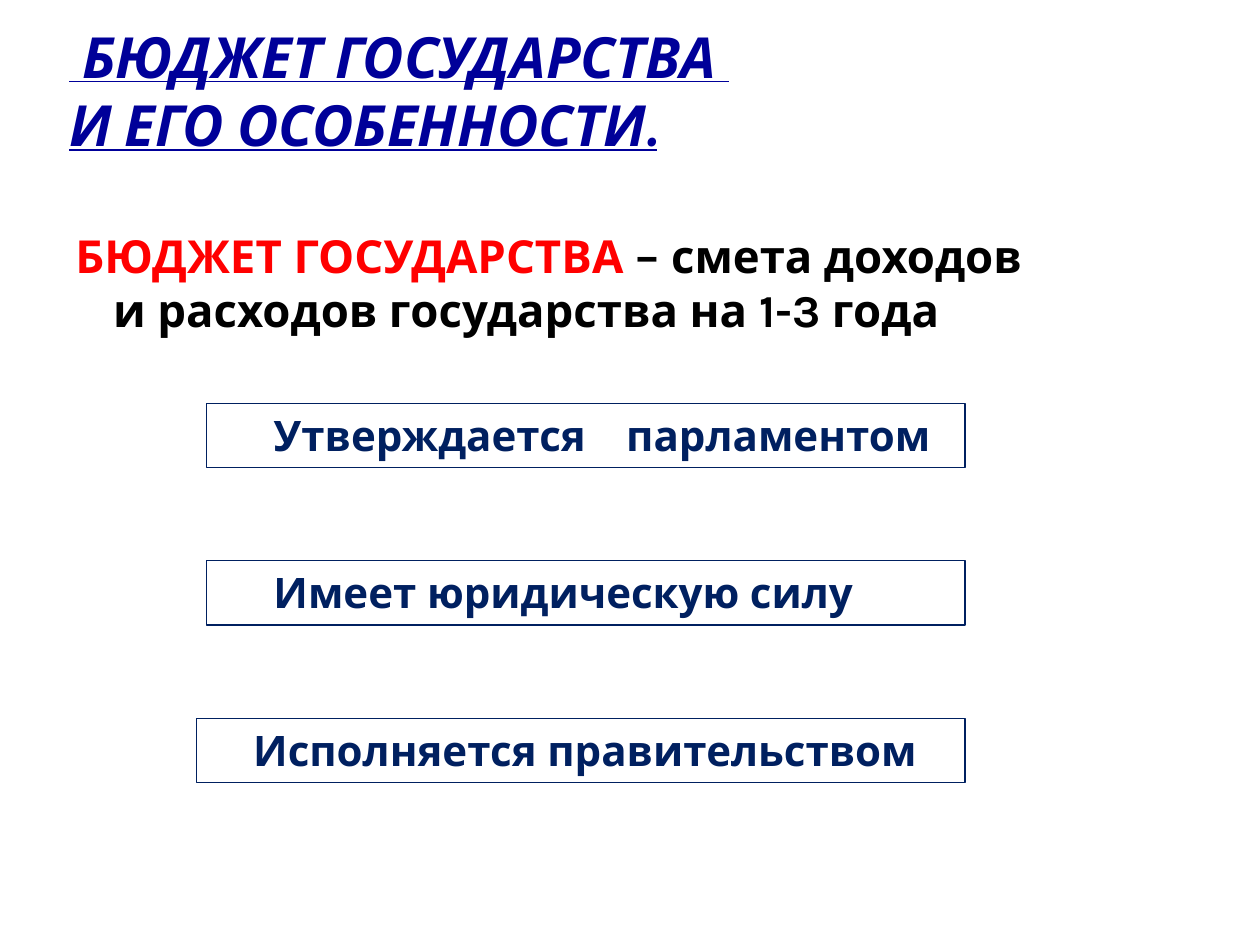
from pptx import Presentation
from pptx.dml.color import RGBColor
from pptx.enum import shapes, text
from pptx.util import Inches, Pt
from lxml import etree

TITLE_BLUE = RGBColor(0x00, 0x00, 0x99)
RED = RGBColor(0xFF, 0x00, 0x00)
BLACK = RGBColor(0x00, 0x00, 0x00)
NAVY = RGBColor(0x00, 0x20, 0x60)
A = "{http://schemas.openxmlformats.org/drawingml/2006/main}"


def style(run, size, color):
    run.font.name = "Karla"
    run.font.size = Pt(size)
    run.font.bold = True
    run.font.color.rgb = color


prs = Presentation()
prs.slide_width, prs.slide_height = Inches(10), Inches(7.5)
slide = prs.slides.add_slide(prs.slide_layouts[6])

# Title, set above the lower part of its box
title = slide.shapes.add_textbox(Inches(0.5), Inches(0.62), Inches(7.92), Inches(1.17)).text_frame
title.word_wrap = True
title.vertical_anchor = text.MSO_ANCHOR.BOTTOM
title.margin_left = title.margin_right = Inches(0.05)
title.margin_top, title.margin_bottom = 0, Inches(0.54)
title.text = " БЮДЖЕТ ГОСУДАРСТВА \vИ ЕГО ОСОБЕННОСТИ."
for run in title.paragraphs[0].runs:
    style(run, 32.4, TITLE_BLUE)
    run.font.italic = run.font.underline = True

# Definition with a hanging indent
body = slide.shapes.add_textbox(Inches(0.5), Inches(1.76), Inches(7.92), Inches(5.3)).text_frame
body.word_wrap = True
definition = body.paragraphs[0]
properties = definition._p.get_or_add_pPr()
properties.set("marL", str(Inches(0.3)))
properties.set("indent", str(-Inches(0.3)))
for words, color in [("БЮДЖЕТ ГОСУДАРСТВА ", RED),
                     ("– смета доходов и расходов государства на 1-3 года", BLACK)]:
    run = definition.add_run()
    run.text = words
    style(run, 26, color)

# Framed features of the budget, evenly spaced
features = [
    ("Утверждается\tпарламентом", 1.64, 0.53),
    ("Имеет юридическую силу", 1.64, 0.53),
    ("Исполняется правительством", 1.56, 0.45),
]
for row, (words, left, inset) in enumerate(features):
    feature = slide.shapes.add_shape(
        shapes.MSO_SHAPE.RECTANGLE, Inches(left), Inches(3.2 + 1.25 * row),
        Inches(7.66 - left), Inches(0.51))
    feature.shadow.inherit = False
    feature.fill.background()
    feature.line.color.rgb = NAVY
    feature.line.width = Pt(0.75)
    frame = feature.text_frame
    frame.word_wrap = True
    frame.vertical_anchor = text.MSO_ANCHOR.TOP
    frame.margin_left = Inches(inset)
    frame.text = words
    line = frame.paragraphs[0]
    line.alignment = text.PP_ALIGN.LEFT
    if "\t" in words:
        stops = etree.SubElement(line._p.get_or_add_pPr(), A + "tabLst")
        etree.SubElement(stops, A + "tab", pos=str(Inches(2.8)), algn="l")
    for run in line.runs:
        style(run, 24, NAVY)

prs.save("out.pptx")
